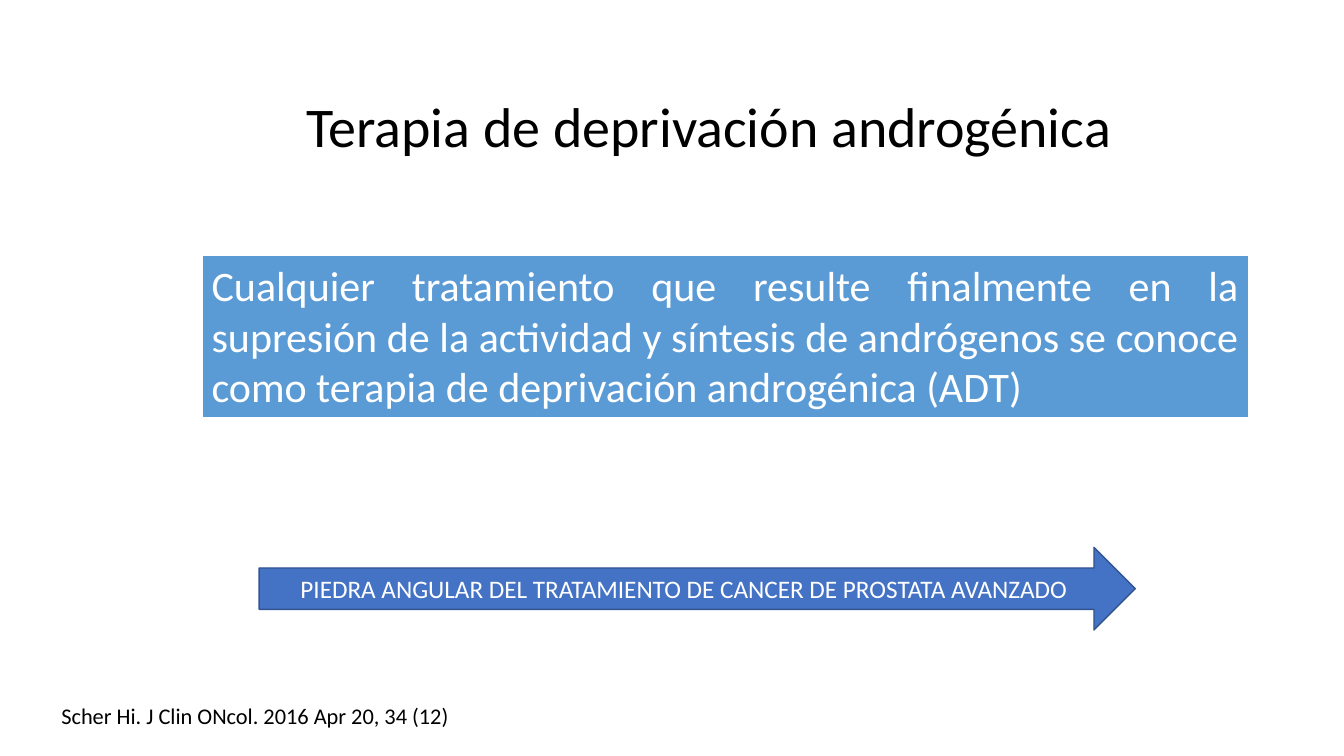
from dataclasses import dataclass
from typing import Optional

from pptx import Presentation
from pptx.dml.color import RGBColor
from pptx.enum.shapes import MSO_SHAPE as Preset
from pptx.enum.text import MSO_ANCHOR as Anchor, MSO_AUTO_SIZE as AutoSize, PP_ALIGN as Align
from pptx.util import Inches, Pt

BLACK = RGBColor(0x00, 0x00, 0x00)
WHITE = RGBColor(0xFF, 0xFF, 0xFF)
SKY = RGBColor(0x5B, 0x9B, 0xD5)
BLUE = RGBColor(0x44, 0x72, 0xC4)
NAVY = RGBColor(0x32, 0x54, 0x91)


@dataclass(frozen=True)
class Block:
    """A piece of text; without a preset it is a plain text box."""
    text: str
    box: tuple[float, float, float, float]
    size: float
    color: RGBColor = BLACK
    align: Align = Align.LEFT
    anchor: Anchor = Anchor.TOP
    auto_size: AutoSize = AutoSize.SHAPE_TO_FIT_TEXT
    preset: Optional[Preset] = None
    fill: RGBColor = WHITE
    line: RGBColor = WHITE
    line_width: float = 1


BLOCKS = [
    Block("Terapia de deprivación androgénica", (2.94, 0.86, 8.51, 0.77), 40),
    Block("Cualquier tratamiento que resulte finalmente en la supresión de la actividad "
          "y síntesis de andrógenos se conoce como terapia de deprivación androgénica (ADT)",
          (2, 2.53, 10.39, 1.62), 30, WHITE, Align.JUSTIFY,
          preset=Preset.RECTANGLE, fill=SKY, line_width=1.5),
    Block("PIEDRA ANGULAR DEL TRATAMIENTO DE CANCER DE PROSTATA AVANZADO ",
          (2.57, 5.43, 8.69, 0.82), 18, WHITE, Align.CENTER, Anchor.MIDDLE, AutoSize.NONE,
          Preset.RIGHT_ARROW, BLUE, NAVY),
    Block("Scher Hi. J Clin ONcol. 2016 Apr 20, 34 (12)", (0.51, 6.92, 5.81, 0.37), 16),
]


def draw_block(shapes, block: Block) -> None:
    box = [Inches(length) for length in block.box]
    if block.preset is None:
        holder = shapes.add_textbox(*box)
    else:
        holder = shapes.add_shape(block.preset, *box)
        holder.shadow.inherit = False
        holder.fill.solid()
        holder.fill.fore_color.rgb = block.fill
        holder.line.color.rgb = block.line
        holder.line.width = Pt(block.line_width)

    frame = holder.text_frame
    frame_format = {"word_wrap": True, "auto_size": block.auto_size,
                    "vertical_anchor": block.anchor}
    for name, value in frame_format.items():
        setattr(frame, name, value)

    paragraph = frame.paragraphs[0]
    paragraph.alignment = block.align
    run = paragraph.add_run()
    run.text = block.text
    for name, value in {"name": "Calibri", "size": Pt(block.size)}.items():
        setattr(run.font, name, value)
    run.font.color.rgb = block.color


def main() -> None:
    deck = Presentation()
    deck.slide_width, deck.slide_height = Inches(13.33), Inches(7.5)
    slide = deck.slides.add_slide(deck.slide_layouts[6])
    for block in BLOCKS:
        draw_block(slide.shapes, block)
    deck.save("out.pptx")


if __name__ == "__main__":
    main()
